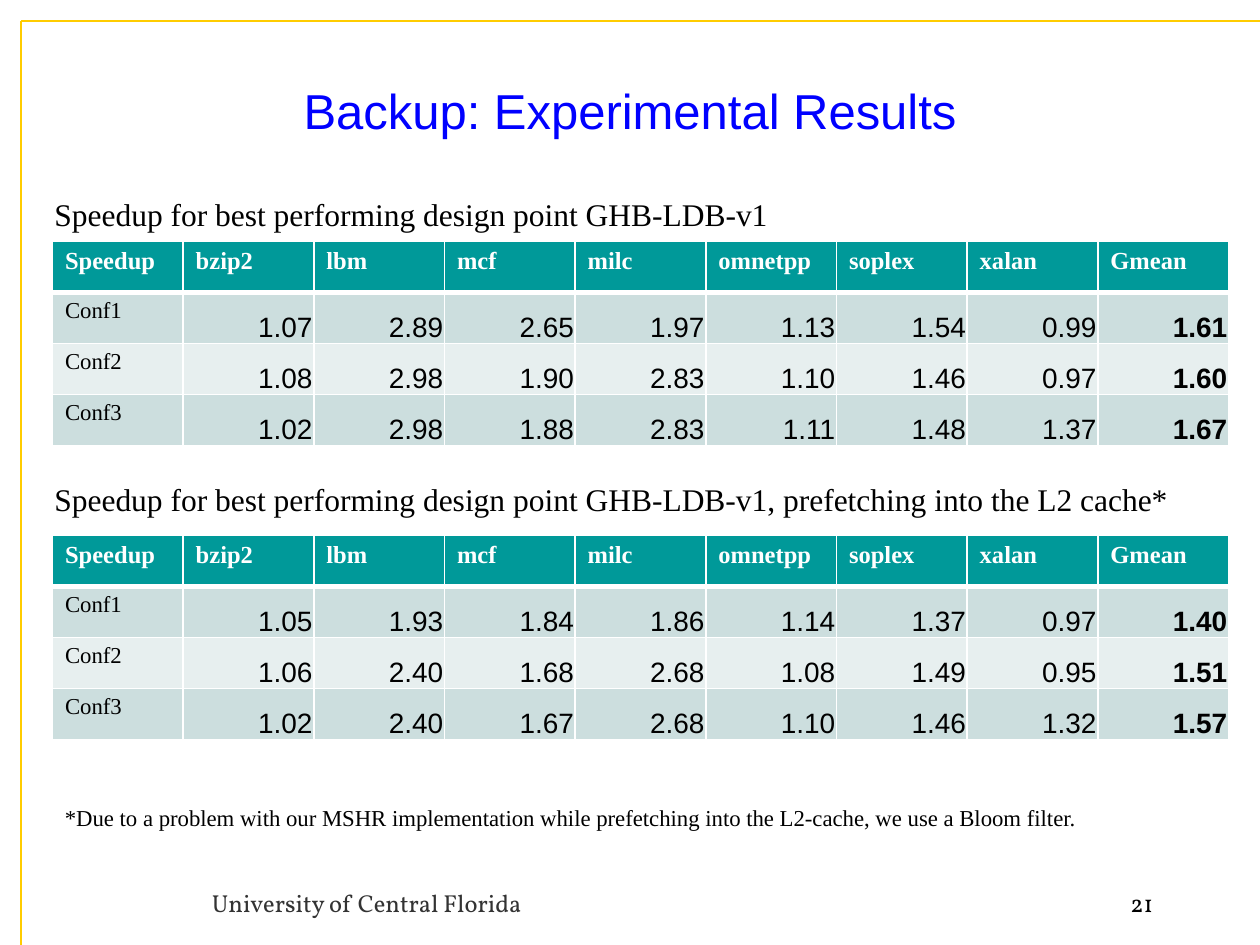
"""Build the backup slide with two speedup tables."""
from lxml.etree import SubElement
from pptx import Presentation
from pptx.dml.color import RGBColor
from pptx.enum.shapes import MSO_CONNECTOR
from pptx.enum.text import MSO_ANCHOR, PP_ALIGN
from pptx.oxml import parse_xml
from pptx.oxml.ns import nsdecls, qn
from pptx.util import Pt

BLACK = RGBColor(0x00, 0x00, 0x00)
WHITE = RGBColor(0xFF, 0xFF, 0xFF)
BLUE = RGBColor(0x00, 0x00, 0xFF)
GRAY = RGBColor(0x33, 0x33, 0x33)
GOLD = RGBColor(0xFF, 0xCC, 0x00)
TEAL = RGBColor(0x00, 0x99, 0x99)
BAND_DARK = RGBColor(0xCC, 0xDE, 0xDE)
BAND_LIGHT = RGBColor(0xE7, 0xEF, 0xEF)

SERIF = "Times New Roman"
HEADING = {"name": SERIF, "size": Pt(18), "color": BLACK}
NOTE = {"name": SERIF, "size": Pt(13), "color": BLACK}
TITLE = {"name": "Arial", "size": Pt(28), "color": BLUE}
FOOTER = {"name": "Vollkorn", "size": Pt(14), "color": GRAY}
PAGE_NUMBER = {"name": "Vollkorn", "size": Pt(14), "color": BLACK}
HEADER = {"name": SERIF, "size": Pt(14), "color": WHITE, "bold": True}
ROW_LABEL = {"name": SERIF, "size": Pt(13), "color": BLACK, "bold": False}
VALUE = {"name": "Arial", "size": Pt(16), "color": BLACK, "bold": False}
MEAN = {**VALUE, "bold": True}
VALUE_CELL = {
    "vertical_anchor": MSO_ANCHOR.BOTTOM,
    "margin_left": Pt(0.75),
    "margin_top": Pt(0.75),
    "margin_right": Pt(0.75),
    "margin_bottom": Pt(0),
}


def write(frame, text, style, align):
    para = frame.paragraphs[0]
    para.alignment = align
    span = para.add_run()
    span.text = text
    for key, value in style.items():
        if key == "color":
            span.font.color.rgb = value
        else:
            setattr(span.font, key, value)


def add_borders(cell, bottom_width):
    properties = cell._tc.get_or_add_tcPr()
    for side, width in (("L", 1), ("R", 1), ("T", 1), ("B", bottom_width)):
        border = parse_xml(f'<a:ln{side} {nsdecls("a")} w="{Pt(width)}"/>')
        fill = SubElement(border, qn("a:solidFill"))
        SubElement(fill, qn("a:srgbClr"), val=str(WHITE))
        properties.append(border)


deck = Presentation()
deck.slide_width, deck.slide_height = Pt(720), Pt(540)
page = deck.slides.add_slide(deck.slide_layouts[6])

for end_x, end_y, width in ((12, 540, 0.75), (720, 12, 1)):
    rule = page.shapes.add_connector(
        MSO_CONNECTOR.STRAIGHT, Pt(12), Pt(12), Pt(end_x), Pt(end_y))
    rule.line.color.rgb = GOLD
    rule.line.width = Pt(width)
    SubElement(rule._element.spPr, qn("a:effectLst"))

texts = [
    ("Backup: Experimental Results", (18, 36, 684, 54), TITLE,
     PP_ALIGN.CENTER, MSO_ANCHOR.MIDDLE),
    ("University of Central Florida", (114, 504, 492, 24), FOOTER,
     PP_ALIGN.LEFT, MSO_ANCHOR.TOP),
    ("21", (600, 504, 66, 24), PAGE_NUMBER, PP_ALIGN.RIGHT, MSO_ANCHOR.TOP),
    ("Speedup for best performing design point GHB-LDB-v1",
     (24, 108, 436, 29), HEADING, PP_ALIGN.LEFT, MSO_ANCHOR.TOP),
    ("Speedup for best performing design point GHB-LDB-v1, prefetching into the L2 cache*",
     (24, 270.75, 667, 29), HEADING, PP_ALIGN.LEFT, MSO_ANCHOR.TOP),
    ("*Due to a problem with our MSHR implementation while prefetching into the "
     "L2-cache, we use a Bloom filter.",
     (30, 456, 601, 23), NOTE, PP_ALIGN.LEFT, MSO_ANCHOR.TOP),
]
for text, bounds, style, align, anchor in texts:
    box = page.shapes.add_textbox(*map(Pt, bounds))
    box.text_frame.word_wrap = True
    box.text_frame.vertical_anchor = anchor
    write(box.text_frame, text, style, align)

columns = "Speedup bzip2 lbm mcf milc omnetpp soplex xalan Gmean".split()
tables = [
    (138, [
        "Conf1 1.07 2.89 2.65 1.97 1.13 1.54 0.99 1.61",
        "Conf2 1.08 2.98 1.90 2.83 1.10 1.46 0.97 1.60",
        "Conf3 1.02 2.98 1.88 2.83 1.11 1.48 1.37 1.67",
    ]),
    (306, [
        "Conf1 1.05 1.93 1.84 1.86 1.14 1.37 0.97 1.40",
        "Conf2 1.06 2.40 1.68 2.68 1.08 1.49 0.95 1.51",
        "Conf3 1.02 2.40 1.67 2.68 1.10 1.46 1.32 1.57",
    ]),
]
for top, lines in tables:
    rows = [columns] + [line.split() for line in lines]
    table = page.shapes.add_table(
        len(rows), len(columns), Pt(30), Pt(top), Pt(672), Pt(116.64)).table
    for row_index, row in enumerate(rows):
        for column_index, text in enumerate(row):
            cell = table.cell(row_index, column_index)
            align = PP_ALIGN.LEFT
            if row_index == 0:
                style, color = HEADER, TEAL
            else:
                style = ROW_LABEL
                color = BAND_DARK if row_index % 2 else BAND_LIGHT
                if column_index > 0:
                    style = MEAN if column_index == len(columns) - 1 else VALUE
                    align = PP_ALIGN.RIGHT
                    for key, value in VALUE_CELL.items():
                        setattr(cell, key, value)
            add_borders(cell, 1 if row_index else 3)
            cell.fill.solid()
            cell.fill.fore_color.rgb = color
            write(cell.text_frame, text, style, align)

deck.save("out.pptx")
